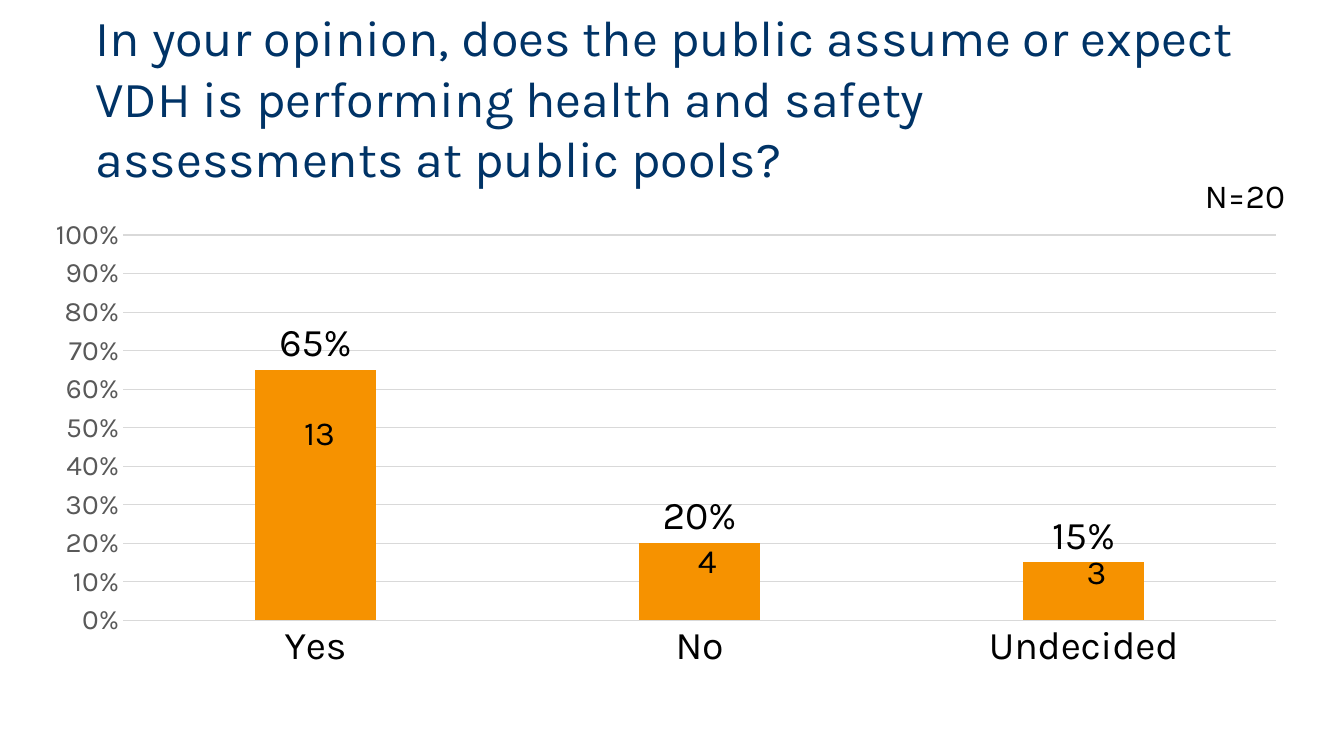
"""Build a slide charting opinions on public pool assessments."""
from lxml import etree
from pptx import Presentation
from pptx import util as u
from pptx.chart import data
from pptx.dml.color import RGBColor
from pptx.enum import chart as kinds, text
from pptx.oxml import ns

FONT = "Karla"
COLORS = {"title": "003366", "text": "000000", "axis": "595959",
          "grid": "D9D9D9", "bar": "F69200"}


def style_font(font, size, color):
    font.name = FONT
    font.size = u.Pt(size)
    font.bold = False
    font.color.rgb = RGBColor.from_string(COLORS[color])


def add_text(page, words, left, top, width, height, size, color, align, anchor):
    box = page.shapes.add_textbox(u.Cm(left), u.Cm(top), u.Cm(width), u.Cm(height))
    frame = box.text_frame
    frame.word_wrap = True
    frame.vertical_anchor = anchor
    para = frame.paragraphs[0]
    para.alignment = align
    span = para.add_run()
    span.text = words
    style_font(span.font, size, color)


deck = Presentation()
deck.slide_width, deck.slide_height = u.Cm(33.87), u.Cm(19.05)
page = deck.slides.add_slide(deck.slide_layouts[6])

add_text(page, "In your opinion, does the public assume or expect VDH is performing "
         "health and safety assessments at public pools?",
         2.16, 0.61, 29.21, 3.68, 36, "title", text.PP_ALIGN.LEFT, text.MSO_ANCHOR.MIDDLE)

answers = data.CategoryChartData(number_format="0%")
answers.categories = ["Yes", "No", "Undecided"]
answers.add_series("Series 1", [0.65, 0.2, 0.15])
chart = page.shapes.add_chart(kinds.XL_CHART_TYPE.COLUMN_CLUSTERED, u.Cm(0.74), u.Cm(5.26),
                              u.Cm(32.05), u.Cm(11.84), answers).chart
chart.has_legend = False
chart.has_title = False
style_font(chart.font, 10, "text")

plot = chart.plots[0]
plot.gap_width = 219
plot.overlap = -27
plot.vary_by_categories = False
bars = plot.series[0]
bars.format.fill.solid()
bars.format.fill.fore_color.rgb = RGBColor.from_string(COLORS["bar"])
labels = bars.data_labels
labels.show_value = True
labels.number_format = "0%"
labels.number_format_is_linked = False
labels.position = kinds.XL_LABEL_POSITION.OUTSIDE_END
style_font(labels.font, 28, "text")

shares = chart.value_axis
shares.minimum_scale, shares.maximum_scale, shares.major_unit = 0, 1, 0.1
shares.has_major_gridlines = True
shares.tick_labels.number_format = "0%"
shares.tick_labels.number_format_is_linked = False
shares.format.line.fill.background()
for axis, size, color in ((chart.category_axis, 28, "text"), (shares, 20, "axis")):
    axis.major_tick_mark = kinds.XL_TICK_MARK.NONE
    axis.minor_tick_mark = kinds.XL_TICK_MARK.NONE
    style_font(axis.tick_labels.font, size, color)
for rule in (chart.category_axis.format.line, shares.major_gridlines.format.line):
    rule.width = u.Pt(0.75)
    rule.color.rgb = RGBColor.from_string(COLORS["grid"])

area = chart.element.find(".//" + ns.qn("c:plotArea"))
for old in area.findall(ns.qn("c:layout")):
    area.remove(old)
layout = etree.Element(ns.qn("c:layout"))
area.insert(0, layout)
manual = etree.SubElement(layout, ns.qn("c:manualLayout"))
for tag, value in (("layoutTarget", "inner"), ("xMode", "edge"), ("yMode", "edge"),
                   ("x", "0.074"), ("y", "0.056"), ("w", "0.906"), ("h", "0.82")):
    etree.SubElement(manual, ns.qn("c:" + tag)).set("val", value)

for words, left, top, width in (("13", 6.99, 10.26, 2.13), ("4", 16.76, 13.49, 2.13),
                                ("N=20", 27.64, 4.29, 7.47), ("3", 26.57, 13.77, 2.13)):
    add_text(page, words, left, top, width, 1.27, 24, "text",
             text.PP_ALIGN.CENTER, text.MSO_ANCHOR.TOP)

deck.save("out.pptx")
